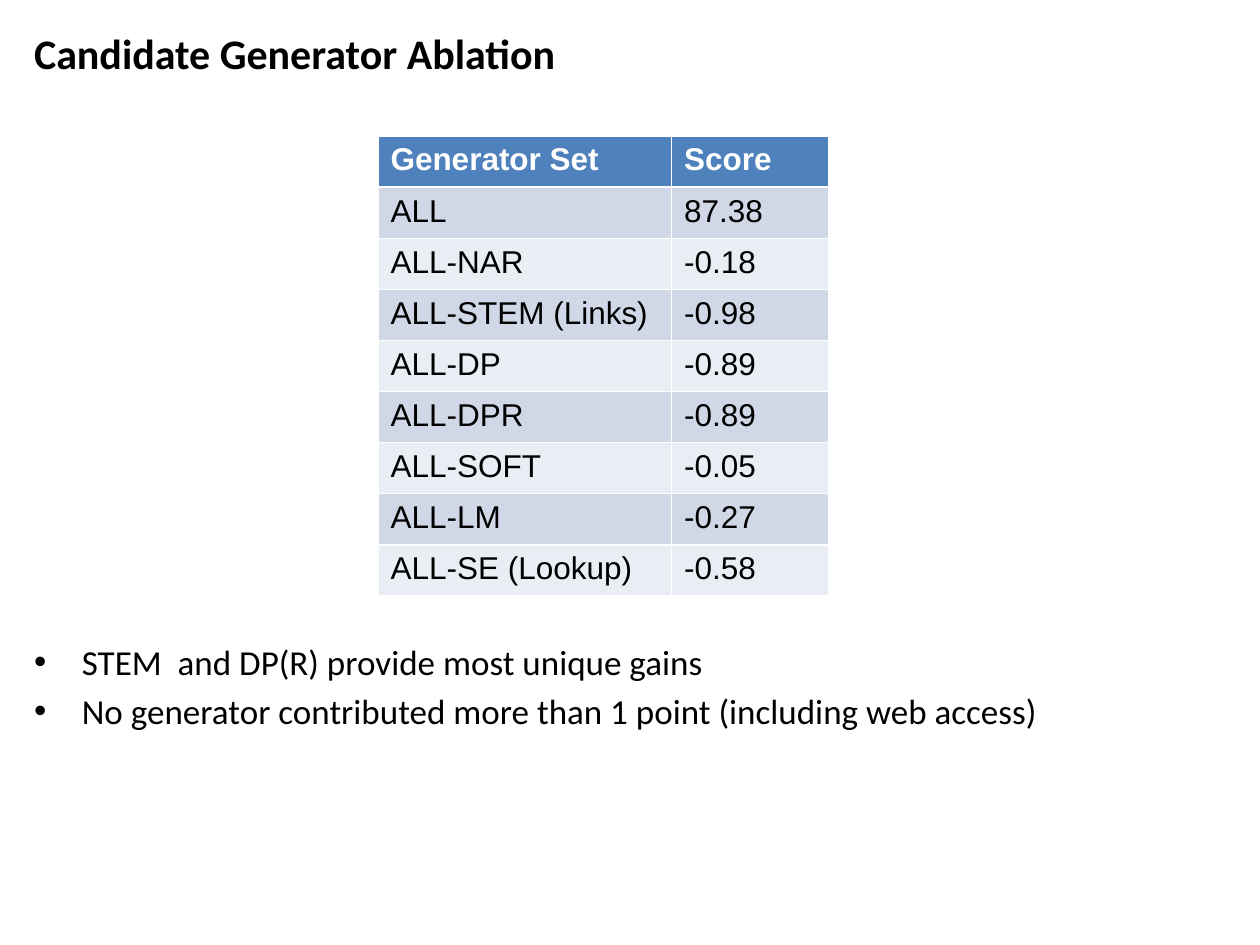
from lxml import etree
from pptx import Presentation
from pptx.dml.color import RGBColor
from pptx.enum.text import MSO_ANCHOR, MSO_AUTO_SIZE, PP_ALIGN
from pptx.oxml.ns import qn
from pptx.util import Inches, Pt

MIDDLE, TOP = MSO_ANCHOR.MIDDLE, MSO_ANCHOR.TOP
LEFT, NO_FIT = PP_ALIGN.LEFT, MSO_AUTO_SIZE.NONE
BLACK = RGBColor(0x00, 0x00, 0x00)
WHITE = RGBColor(0xFF, 0xFF, 0xFF)
BLUE = RGBColor(0x4F, 0x81, 0xBD)
BANDS = [RGBColor(0xE9, 0xED, 0xF4), RGBColor(0xD0, 0xD8, 0xE8)]

ROWS = [
    ("Generator Set", "Score"),
    ("ALL", "87.38"),
    ("ALL-NAR", "-0.18"),
    ("ALL-STEM (Links)", "-0.98"),
    ("ALL-DP", "-0.89"),
    ("ALL-DPR", "-0.89"),
    ("ALL-SOFT", "-0.05"),
    ("ALL-LM", "-0.27"),
    ("ALL-SE (Lookup)", "-0.58"),
]
POINTS = [
    "STEM  and DP(R) provide most unique gains",
    "No generator contributed more than 1 point (including web access)",
]


def place(shape, left, top, width, height):
    shape.left, shape.top = Inches(left), Inches(top)
    shape.width, shape.height = Inches(width), Inches(height)


def style(para, name, size, color, bold=False):
    font = para.font
    font.name, font.size, font.bold = name, Pt(size), bold
    font.color.rgb = color


deck = Presentation()
deck.slide_width, deck.slide_height = Inches(10), Inches(7.5)
slide = deck.slides.add_slide(deck.slide_layouts[1])

# Title
title = slide.shapes.title
place(title, 0.17, 0.17, 8, 0.5)
frame = title.text_frame
frame.text = "Candidate Generator Ablation"
frame.vertical_anchor, frame.auto_size = MIDDLE, NO_FIT
frame.paragraphs[0].alignment = LEFT
style(frame.paragraphs[0], "Calibri", 24, BLACK, True)

# Findings below the table
body = slide.placeholders[1]
place(body, 0.17, 5.03, 9.5, 1.8)
frame = body.text_frame
frame.text = "\n".join(POINTS)
frame.vertical_anchor, frame.auto_size = TOP, NO_FIT
for i, para in enumerate(frame.paragraphs):
    props = para._p.get_or_add_pPr()
    props.set("marL", str(Inches(0.38)))
    props.set("indent", str(Inches(-0.38)))
    etree.SubElement(props, qn("a:buFont")).set("typeface", "Arial")
    etree.SubElement(props, qn("a:buChar")).set("char", "•")
    para.space_before = Pt(4 if i else 0)
    style(para, "Calibri", 20, BLACK)

# Score table
table = slide.shapes.add_table(
    len(ROWS), 2, Inches(3), Inches(1.08), Inches(3.58), Inches(3.65)
).table
for col, width in zip(table.columns, (2.33, 1.25)):
    col.width = Inches(width)
for r, row in enumerate(ROWS):
    head = r == 0
    for c, text in enumerate(row):
        cell = table.cell(r, c)
        cell.text = text
        cell.fill.solid()
        cell.fill.fore_color.rgb = BLUE if head else BANDS[r % 2]
        style(cell.text_frame.paragraphs[0], "Arial", 18,
              WHITE if head else BLACK, head)

deck.save("out.pptx")
